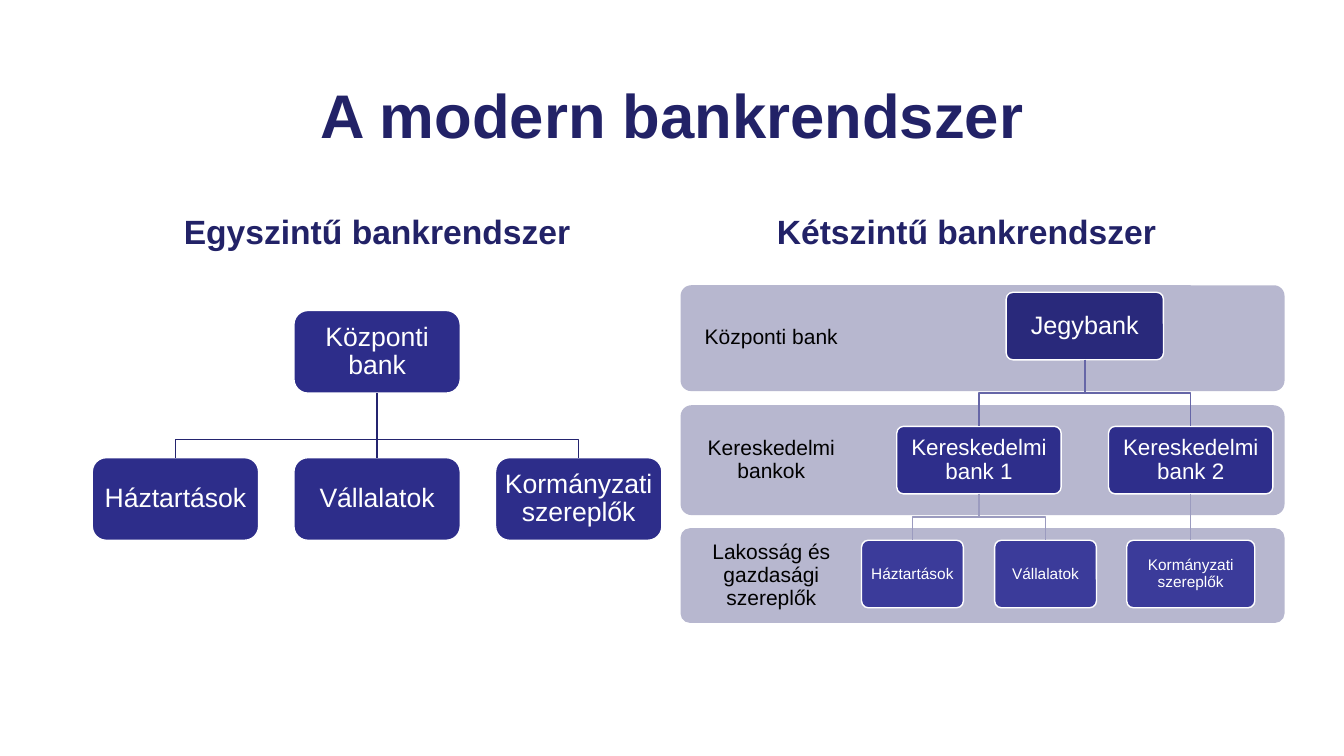
from pptx import Presentation
from pptx.dml.color import RGBColor
from pptx.enum.shapes import MSO_CONNECTOR, MSO_SHAPE
from pptx.enum.text import MSO_ANCHOR, PP_ALIGN
from pptx.oxml.xmlchemy import OxmlElement
from pptx.util import Inches, Pt

ROUNDED = MSO_SHAPE.ROUNDED_RECTANGLE
STRAIGHT = MSO_CONNECTOR.STRAIGHT
MIDDLE = MSO_ANCHOR.MIDDLE
CENTER = PP_ALIGN.CENTER
BOTTOM_SIDE, TOP_SIDE = 2, 0
FONT = "Arial"
COLORS = {
    "heading": "222267",
    "white": "FFFFFF",
    "black": "000000",
    "single": "2D2D8A",
    "single_line": "24246F",
    "band": "B7B7CF",
    "central": "29297B",
    "commercial": "2E2E8B",
    "client": "3B3B9A",
    "commercial_line": "6666A7",
    "client_line": "9B9BBF",
}


def color(name):
    return RGBColor.from_string(COLORS[name])


def write_text(box, text, size, color_name, bold=False, spacing=0.9):
    frame = box.text_frame
    frame.word_wrap = True
    frame.vertical_anchor = MIDDLE
    para = frame.paragraphs[0]
    para.text = text
    para.alignment = CENTER
    para.line_spacing = spacing
    para.font.name = FONT
    para.font.size = Pt(size)
    para.font.bold = bold
    para.font.color.rgb = color(color_name)


def set_margins(box, inset, right=None):
    frame = box.text_frame
    frame.margin_left = frame.margin_top = frame.margin_bottom = Inches(inset)
    frame.margin_right = Inches(inset if right is None else right)


def add_heading(page, text, left, top, width, height, size):
    box = page.shapes.add_textbox(
        Inches(left), Inches(top), Inches(width), Inches(height))
    write_text(box, text, size, "heading", bold=True, spacing=1.0)


def add_rounded(page, left, top, width, height, fill, corner):
    box = page.shapes.add_shape(
        ROUNDED, Inches(left), Inches(top), Inches(width), Inches(height))
    box.adjustments[0] = corner
    box.shadow.inherit = False
    box.fill.solid()
    box.fill.fore_color.rgb = color(fill)
    return box


def add_band(page, text, top, height):
    width, label_width, inset = 5.99, 1.8, 0.12
    band = add_rounded(page, 6.75, top, width, height, "band", 0.1)
    band.line.fill.background()
    set_margins(band, inset, width - label_width + inset)
    write_text(band, text, 15, "black")


def add_node(page, text, center, top, width, height, size, fill, corner=0.1, inset=0.07):
    node = add_rounded(page, center - width / 2, top, width, height, fill, corner)
    node.line.color.rgb = color("white")
    node.line.width = Pt(1)
    set_margins(node, inset)
    write_text(node, text, size, "white")
    return node


def style_line(shape, line_color):
    shape.line.color.rgb = color(line_color)
    shape.line.width = Pt(1)


def link(page, parent, child, line_color, bend=0.5):
    start_x = parent.left + parent.width // 2
    start_y = parent.top + parent.height
    end_x = child.left + child.width // 2
    end_y = child.top
    if abs(end_x - start_x) < Inches(0.01):
        line = page.shapes.add_connector(STRAIGHT, start_x, start_y, end_x, end_y)
        line.begin_connect(parent, BOTTOM_SIDE)
        line.end_connect(child, TOP_SIDE)
        line._element.spPr.append(OxmlElement("a:effectLst"))
    else:
        bend_y = start_y + int((end_y - start_y) * bend)
        builder = page.shapes.build_freeform(start_x, start_y)
        builder.add_line_segments(
            [(start_x, bend_y), (end_x, bend_y), (end_x, end_y)], close=False)
        line = builder.convert_to_shape()
        line.fill.background()
        line.shadow.inherit = False
    style_line(line, line_color)


def add_single_level(page):
    def single_node(text, column, top):
        return add_node(page, text, 1.74 + 2 * column, top, 1.65, 0.82, 19,
                        "single", corner=0.17, inset=0.05)

    bank = single_node("Központi bank", 1, 3.08)
    clients = ("Háztartások", "Vállalatok", "Kormányzati szereplők")
    for column, text in enumerate(clients):
        client = single_node(text, column, 4.54)
        link(page, bank, client, "single_line", bend=0.72)


def add_two_level(page):
    for text, top, height in (
        ("Lakosság és gazdasági szereplők", 5.24, 0.94),
        ("Kereskedelmi bankok", 4.02, 1.09),
        ("Központi bank", 2.83, 1.05),
    ):
        add_band(page, text, top, height)

    central = add_node(page, "Jegybank", 10.76, 2.9, 1.56, 0.67, 18, "central")
    banks = (
        ("Kereskedelmi bank 1", 9.71,
         (("Háztartások", 9.05, 1.01), ("Vállalatok", 10.37, 1.01))),
        ("Kereskedelmi bank 2", 11.81,
         (("Kormányzati szereplők", 11.81, 1.27),)),
    )
    for bank_text, bank_center, clients in banks:
        bank = add_node(page, bank_text, bank_center, 4.23, 1.63, 0.67, 16, "commercial")
        link(page, central, bank, "commercial_line")
        for text, center, width in clients:
            client = add_node(page, text, center, 5.36, width, 0.67, 11, "client")
            link(page, bank, client, "client_line")


def main():
    deck = Presentation()
    deck.slide_width = Inches(13.33)
    deck.slide_height = Inches(7.5)
    page = deck.slides.add_slide(deck.slide_layouts[6])
    add_heading(page, "A modern bankrendszer", 0.92, 0.4, 11.5, 1.45, 44)
    add_heading(page, "Egyszintű bankrendszer", 0.92, 1.84, 5.64, 0.9, 24)
    add_heading(page, "Kétszintű bankrendszer", 6.75, 1.84, 5.67, 0.9, 24)
    add_single_level(page)
    add_two_level(page)
    deck.save("out.pptx")


if __name__ == "__main__":
    main()
